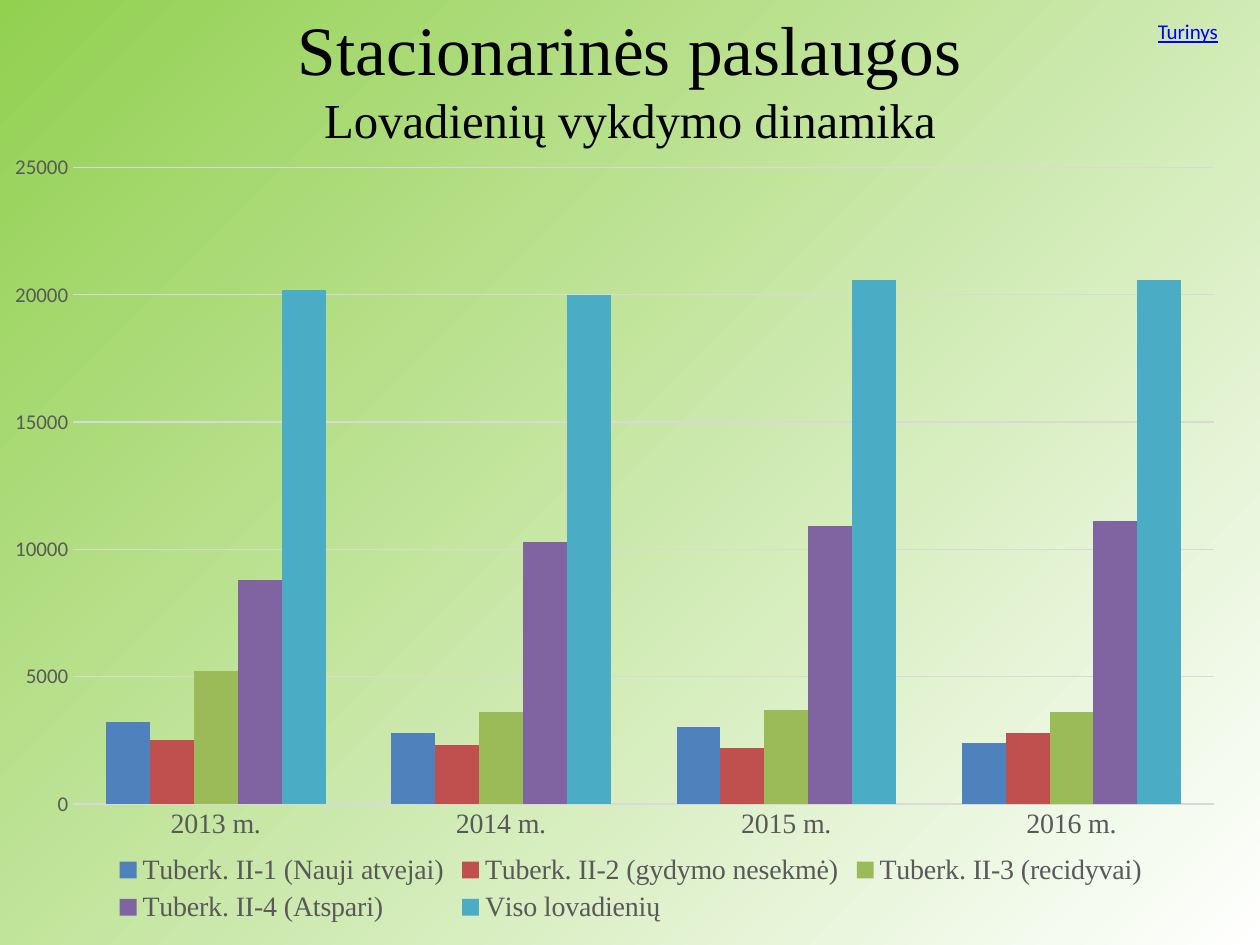
"""Build a slide with a clustered column chart of bed-days by year."""
from lxml.etree import SubElement
from pptx import Presentation
from pptx.chart.data import CategoryChartData
from pptx.dml.color import RGBColor
from pptx.enum.chart import XL_CHART_TYPE, XL_LEGEND_POSITION, XL_TICK_MARK
from pptx.enum.text import MSO_ANCHOR, PP_ALIGN
from pptx.oxml.ns import qn
from pptx.util import Inches, Pt

BLACK = RGBColor(0x00, 0x00, 0x00)
BLUE = RGBColor(0x00, 0x00, 0xFF)
GRAY = RGBColor(0x59, 0x59, 0x59)
PALE = RGBColor(0xD9, 0xD9, 0xD9)
GREEN = RGBColor(0x92, 0xD0, 0x50)
WHITE = RGBColor(0xFF, 0xFF, 0xFF)
SERIF, SANS = "Times New Roman", "Calibri"

TITLE = [("Stacionarinės paslaugos", 39.6), ("Lovadienių vykdymo dinamika", 27.9)]
LINK = [("Turinys", 12)]
YEARS = ["2013 m.", "2014 m.", "2015 m.", "2016 m."]
SERIES = [
    ("Tuberk. II-1 (Nauji atvejai)", (3200, 2800, 3000, 2400), RGBColor(0x4F, 0x81, 0xBD)),
    ("Tuberk. II-2 (gydymo nesekmė)", (2500, 2300, 2200, 2800), RGBColor(0xC0, 0x50, 0x4D)),
    ("Tuberk. II-3 (recidyvai)", (5200, 3600, 3700, 3600), RGBColor(0x9B, 0xBB, 0x59)),
    ("Tuberk. II-4 (Atspari)", (8800, 10300, 10900, 11100), RGBColor(0x80, 0x64, 0xA2)),
    ("Viso lovadienių", (20200, 20000, 20600, 20600), RGBColor(0x4B, 0xAC, 0xC6)),
]
CHART = (0.12, 1.15, 9.76, 6.22)
PLOT = (0.45, 0.18, 9.07, 5.05)


def style(font, size, face, color):
    font.size, font.name = Pt(size), face
    font.color.rgb = color


def add_text(slide, lines, box, face=SERIF, color=BLACK, align=PP_ALIGN.LEFT, under=None):
    frame = slide.shapes.add_textbox(*map(Inches, box)).text_frame
    frame.word_wrap = True
    frame.vertical_anchor = MSO_ANCHOR.MIDDLE
    para = frame.paragraphs[0]
    para.alignment = align
    for row, (text, size) in enumerate(lines):
        if row:
            para.add_line_break()
        run = para.add_run()
        run.text = text
        style(run.font, size, face, color)
        run.font.underline = under


def set_line(line):
    line.color.rgb = PALE
    line.width = Pt(0.75)


def set_plot(chart):
    area = chart.element.chart.plotArea
    for old in area.findall(qn("c:layout")):
        area.remove(old)
    layout = SubElement(area, qn("c:layout"))
    area.insert(0, layout)
    manual = SubElement(layout, qn("c:manualLayout"))
    sides = [round(part / whole, 3) for part, whole in zip(PLOT, CHART[2:] * 2)]
    names = ["layoutTarget", "xMode", "yMode", "x", "y", "w", "h"]
    for name, val in zip(names, ["inner", "edge", "edge", *sides]):
        SubElement(manual, qn(f"c:{name}")).set("val", str(val))


def add_graph(slide):
    data = CategoryChartData()
    data.categories = YEARS
    for name, vals, _ in SERIES:
        data.add_series(name, vals)
    chart = slide.shapes.add_chart(
        XL_CHART_TYPE.COLUMN_CLUSTERED, *map(Inches, CHART), data).chart
    style(chart.font, 10, SANS, BLACK)
    chart.has_title = False
    plot = chart.plots[0]
    plot.gap_width, plot.overlap, plot.vary_by_categories = 150, 0, False
    for item, (_, _, color) in zip(plot.series, SERIES):
        item.format.fill.solid()
        item.format.fill.fore_color.rgb = color

    base, side = chart.category_axis, chart.value_axis
    for axis, size, face in ((base, 16, SERIF), (side, 12, SANS)):
        axis.major_tick_mark = axis.minor_tick_mark = XL_TICK_MARK.NONE
        style(axis.tick_labels.font, size, face, GRAY)
    set_line(base.format.line)
    side.format.line.fill.background()
    side.minimum_scale, side.maximum_scale, side.major_unit = 0, 25000, 5000
    set_line(side.major_gridlines.format.line)

    chart.has_legend = True
    chart.legend.position = XL_LEGEND_POSITION.BOTTOM
    chart.legend.include_in_layout = False
    style(chart.legend.font, 16, SERIF, GRAY)
    set_plot(chart)


def main():
    deck = Presentation()
    deck.slide_width, deck.slide_height = Inches(10), Inches(7.5)
    slide = deck.slides.add_slide(deck.slide_layouts[6])
    fill = slide.background.fill
    fill.gradient()
    fill.gradient_angle = 315
    for stop, color, place in zip(fill.gradient_stops, (GREEN, WHITE), (0, 1)):
        stop.color.rgb, stop.position = color, place
    add_text(slide, TITLE, (0.5, 0, 9, 1.23), align=PP_ALIGN.CENTER)
    add_graph(slide)
    add_text(slide, LINK, (9.09, 0.1, 0.91, 0.3), face=SANS, color=BLUE, under=True)
    deck.save("out.pptx")


if __name__ == "__main__":
    main()
